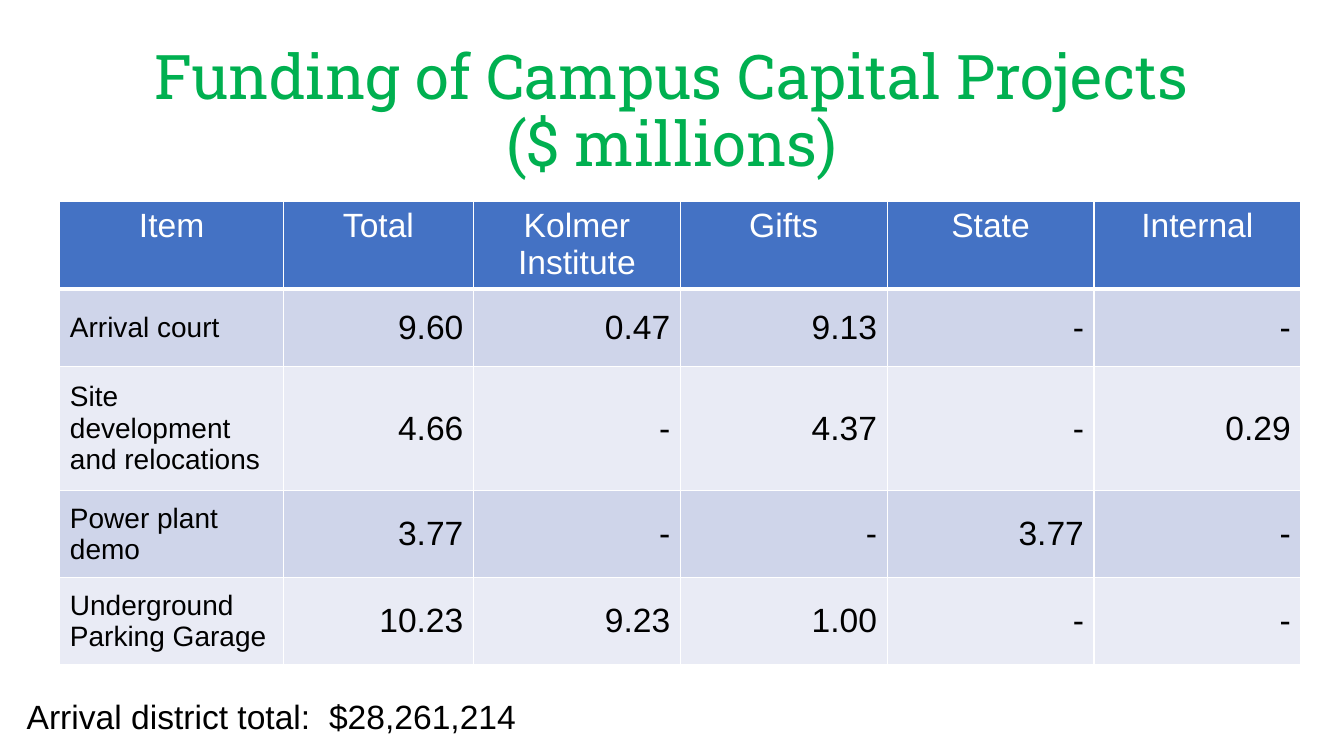
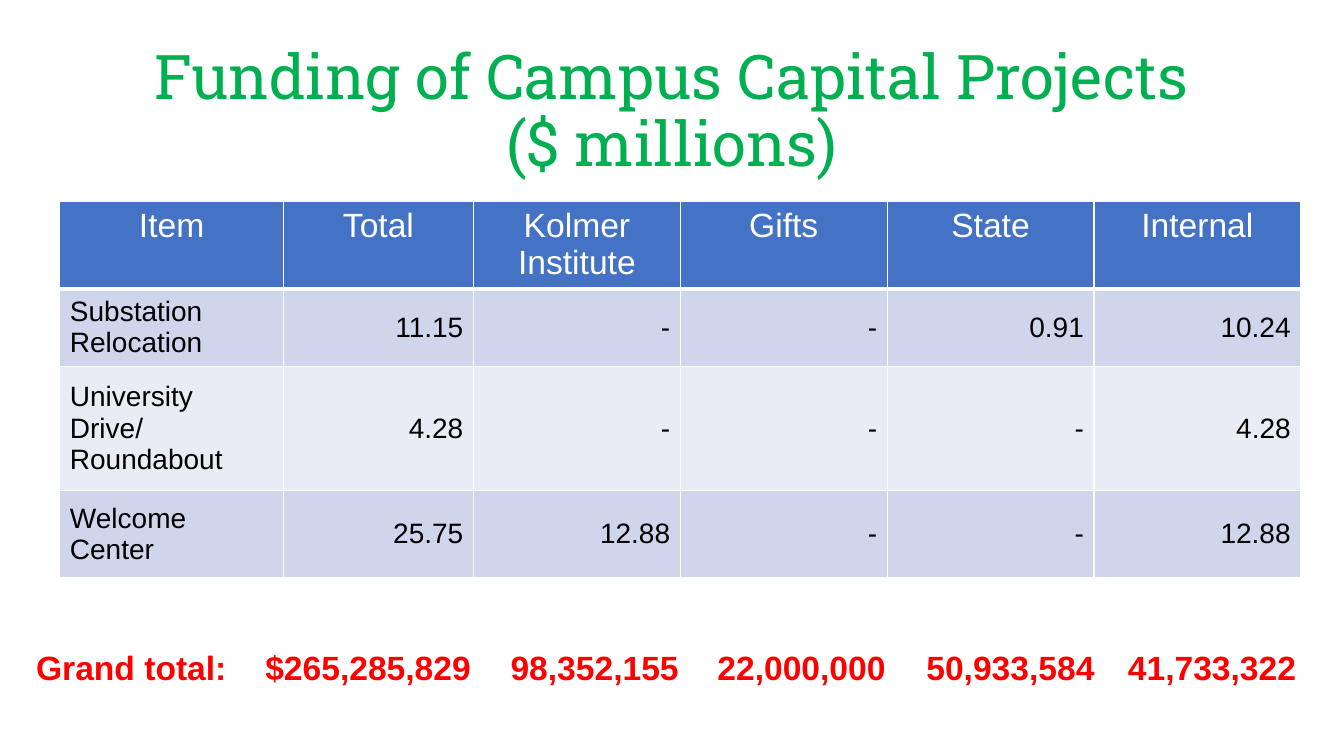
import pptx
import pptx.dml.color
import pptx.enum.text
import pptx.oxml
import pptx.oxml.ns
import pptx.util

RGBColor = pptx.dml.color.RGBColor
PP_ALIGN = pptx.enum.text.PP_ALIGN
MSO_ANCHOR = pptx.enum.text.MSO_ANCHOR
MSO_AUTO_SIZE = pptx.enum.text.MSO_AUTO_SIZE

EMU_PER_PX = 9525
SLIDE_WIDTH, SLIDE_HEIGHT = 1280, 720

WHITE = RGBColor(0xFF, 0xFF, 0xFF)
BLACK = RGBColor(0, 0, 0)
RED = RGBColor(0xFF, 0, 0)
GREEN = RGBColor(0, 0xB0, 0x50)
HEADER_BLUE = RGBColor(0x44, 0x72, 0xC4)
BANDS = [RGBColor(0xCF, 0xD5, 0xEA), RGBColor(0xE9, 0xEB, 0xF5)]

TITLE_FONT, BODY_FONT = "Roboto Slab", "Arial"
TITLE_LINES = ["Funding of Campus Capital Projects", "($ millions)"]
FUNDING_HEADINGS = ["Item", "Total", "Kolmer Institute", "Gifts", "State", "Internal"]
COLUMN_WIDTHS = [213, 181, 197, 197, 197, 197]
ROW_HEIGHTS = [83, 74, 118, 83, 83]
HEADING_SIZE, ITEM_SIZE = 24, 20

ARRIVAL_PROJECTS = [
    ["Arrival court", "9.60", "0.47", "9.13", "-", "-"],
    ["Site development and relocations", "4.66", "-", "4.37", "-", "0.29"],
    ["Power plant demo", "3.77", "-", "-", "3.77", "-"],
    ["Underground Parking Garage", "10.23", "9.23", "1.00", "-", "-"],
]
OTHER_PROJECTS = [
    ["Substation Relocation", "11.15", "-", "-", "0.91", "10.24"],
    ["University Drive/ Roundabout", "4.28", "-", "-", "-", "4.28"],
    ["Welcome Center", "25.75", "12.88", "-", "-", "12.88"],
]
GRAND_TOTALS = ["Grand total:", "$265,285,829", "98,352,155", "22,000,000",
                "50,933,584", "41,733,322"]
GRAND_TOTAL_TABS = [414, 612, 809, 1008, 1200]


def px(length):
    return pptx.util.Emu(length * EMU_PER_PX)


def add_run(paragraph, text, size, color, font=BODY_FONT, bold=False):
    run = paragraph.add_run()
    run.text = text
    run.font.name = font
    run.font.size = pptx.util.Pt(size)
    run.font.bold = bold
    run.font.color.rgb = color


def add_titled_slide(deck):
    slide = deck.slides.add_slide(deck.slide_layouts[5])
    title = slide.shapes.title
    title.left, title.top, title.width, title.height = map(px, (88, 38, 1104, 139))
    frame = title.text_frame
    frame.auto_size = MSO_AUTO_SIZE.NONE
    frame.word_wrap = True
    frame.vertical_anchor = MSO_ANCHOR.MIDDLE
    paragraph = frame.paragraphs[0]
    paragraph.alignment = PP_ALIGN.CENTER
    paragraph.line_spacing = 0.9
    for index, line in enumerate(TITLE_LINES):
        if index:
            paragraph.add_line_break()
        add_run(paragraph, line, 44, GREEN, TITLE_FONT)
    return slide


def set_heading_borders(cell):
    """Give the cell white edges, the bottom one heavier."""
    properties = cell._tc.get_or_add_tcPr()
    for position, (side, points) in enumerate([("L", 1), ("R", 1), ("T", 1), ("B", 3)]):
        properties.insert(position, pptx.oxml.parse_xml(
            f'<a:ln{side} {pptx.oxml.ns.nsdecls("a")} w="{pptx.util.Pt(points)}">'
            f'<a:solidFill><a:srgbClr val="{WHITE}"/></a:solidFill></a:ln{side}>'))


def fill_cell(cell, text, size, color, fill, alignment, anchor):
    cell.fill.solid()
    cell.fill.fore_color.rgb = fill
    cell.vertical_anchor = anchor
    paragraph = cell.text_frame.paragraphs[0]
    paragraph.alignment = alignment
    add_run(paragraph, text, size, color)


def add_funding_table(slide, projects, amount_size):
    heights = ROW_HEIGHTS[:len(projects) + 1]
    table = slide.shapes.add_table(
        len(heights), len(COLUMN_WIDTHS), px(57), px(192),
        px(sum(COLUMN_WIDTHS)), px(sum(heights))).table
    for column, width in zip(table.columns, COLUMN_WIDTHS):
        column.width = px(width)
    for row, height in zip(table.rows, heights):
        row.height = px(height)

    for column_index, heading in enumerate(FUNDING_HEADINGS):
        cell = table.cell(0, column_index)
        fill_cell(cell, heading, HEADING_SIZE, WHITE, HEADER_BLUE,
                  PP_ALIGN.CENTER, MSO_ANCHOR.TOP)
        set_heading_borders(cell)

    for row_index, project in enumerate(projects):
        for column_index, text in enumerate(project):
            is_amount = column_index > 0
            fill_cell(table.cell(row_index + 1, column_index), text,
                      amount_size if is_amount else ITEM_SIZE, BLACK,
                      BANDS[row_index % 2],
                      PP_ALIGN.RIGHT if is_amount else PP_ALIGN.LEFT,
                      MSO_ANCHOR.MIDDLE)


def set_right_tabs(paragraph, positions):
    stops = "".join(f'<a:tab pos="{px(position)}" algn="r"/>' for position in positions)
    paragraph._p.get_or_add_pPr().append(pptx.oxml.parse_xml(
        f'<a:tabLst {pptx.oxml.ns.nsdecls("a")}>{stops}</a:tabLst>'))


def add_total_line(slide, left, top, width, parts, color, bold=False, right_tabs=()):
    frame = slide.shapes.add_textbox(px(left), px(top), px(width), px(48)).text_frame
    frame.word_wrap = True
    frame.auto_size = MSO_AUTO_SIZE.SHAPE_TO_FIT_TEXT
    paragraph = frame.paragraphs[0]
    if right_tabs:
        set_right_tabs(paragraph, right_tabs)
    add_run(paragraph, "\t".join(parts), 24, color, bold=bold)


def main():
    deck = pptx.Presentation()
    deck.slide_width, deck.slide_height = px(SLIDE_WIDTH), px(SLIDE_HEIGHT)

    arrival_slide = add_titled_slide(deck)
    add_funding_table(arrival_slide, ARRIVAL_PROJECTS, amount_size=24)
    add_total_line(arrival_slide, 16, 658, 651,
                   ["Arrival district total:", "$28,261,214"], BLACK)

    grand_total_slide = add_titled_slide(deck)
    add_funding_table(grand_total_slide, OTHER_PROJECTS, amount_size=20)
    add_total_line(grand_total_slide, 25, 611, 1222, GRAND_TOTALS, RED,
                   bold=True, right_tabs=GRAND_TOTAL_TABS)

    deck.save("out.pptx")


if __name__ == "__main__":
    main()
